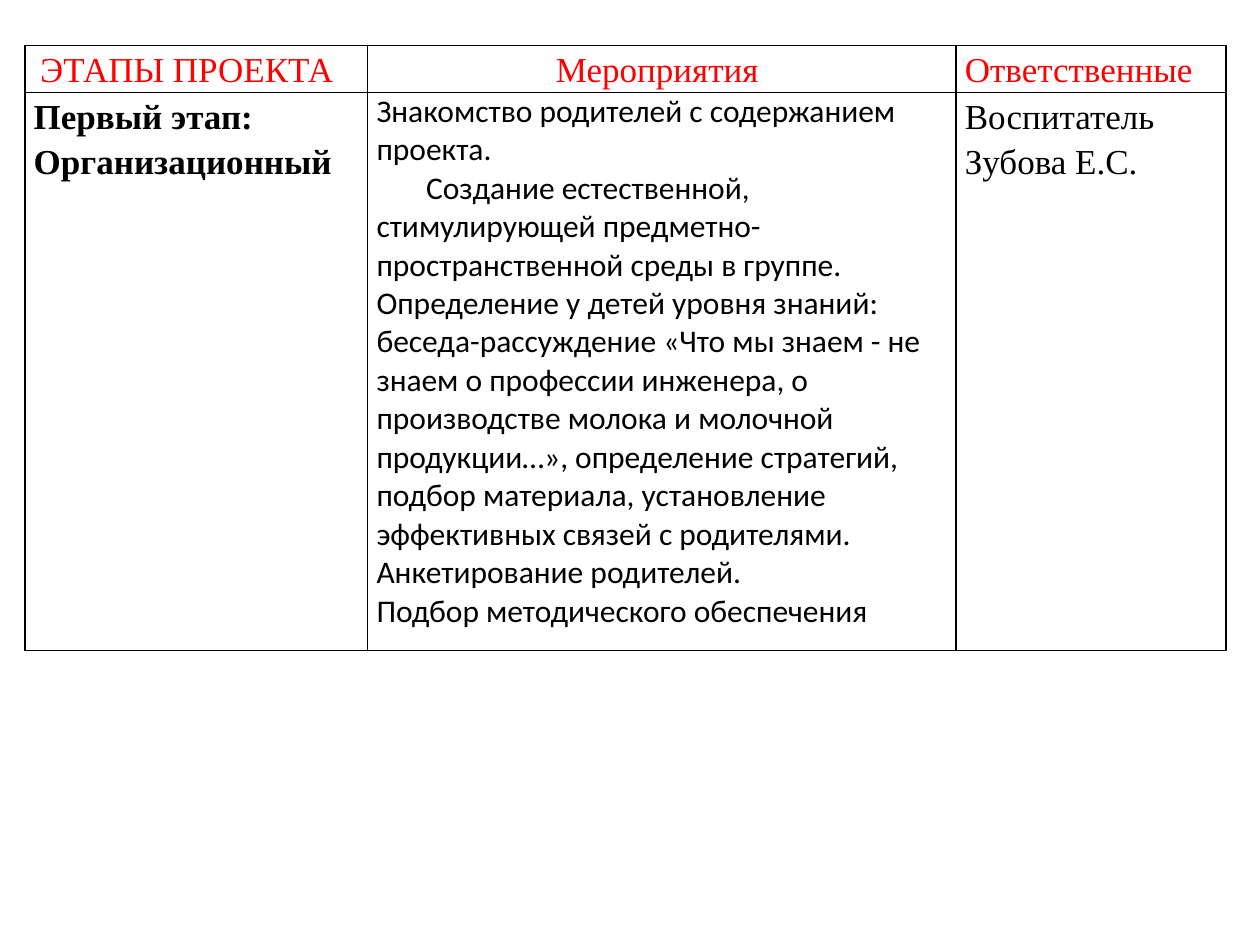
from lxml import etree
from pptx import Presentation
from pptx.dml.color import RGBColor
from pptx.enum.text import MSO_ANCHOR, PP_ALIGN
from pptx.oxml.ns import qn
from pptx.util import Cm, Pt

BLACK = RGBColor(0x00, 0x00, 0x00)
RED = RGBColor(0xFF, 0x00, 0x00)
LEFT, CENTER = PP_ALIGN.LEFT, PP_ALIGN.CENTER
TOP = MSO_ANCHOR.TOP

SERIF, SANS = "Times New Roman", "Calibri"
COLUMN_WIDTHS = (6.91, 11.86, 5.44)
ROW_HEIGHTS = (0.94, 11.25)
SIDE_MARGIN = 0.18

ACTIVITIES = (
    "Знакомство родителей с содержанием проекта.",
    "Создание естественной, стимулирующей предметно-пространственной среды в группе.",
    "Определение у детей уровня знаний: беседа-рассуждение «Что мы знаем - не знаем "
    "о профессии инженера, о производстве молока и молочной продукции…», определение "
    "стратегий, подбор материала, установление эффективных связей с родителями.",
    "Анкетирование родителей.",
    "Подбор методического обеспечения",
)


def set_borders(cell):
    """Draw a thin black line on each side of a cell."""
    properties = cell._tc.get_or_add_tcPr()
    for position, side in enumerate(("a:lnL", "a:lnR", "a:lnT", "a:lnB")):
        line = etree.Element(qn(side), w=str(Pt(1)))
        fill = etree.SubElement(line, qn("a:solidFill"))
        etree.SubElement(fill, qn("a:srgbClr"), val=str(BLACK))
        properties.insert(position, line)


def fill_cell(cell, texts, font=SERIF, size=20, color=BLACK, bold=False,
              alignment=LEFT, spacing=1.15, right_gap=0):
    """Format a cell and write one paragraph for each text."""
    cell.fill.background()
    set_borders(cell)
    cell.vertical_anchor = TOP
    cell.margin_left = Cm(SIDE_MARGIN)
    cell.margin_right = Cm(SIDE_MARGIN + right_gap)
    cell.margin_top = cell.margin_bottom = Cm(0)
    frame = cell.text_frame
    for index, text in enumerate(texts):
        paragraph = frame.add_paragraph() if index else frame.paragraphs[0]
        paragraph.alignment = alignment
        paragraph.line_spacing = spacing
        run = paragraph.add_run()
        run.text = text
        run.font.name = font
        run.font.size = Pt(size)
        run.font.bold = bold
        run.font.color.rgb = color


def add_stage_table(slide, left, top):
    """Place the table of project stages with its top left corner at a point."""
    shape = slide.shapes.add_table(
        len(ROW_HEIGHTS), len(COLUMN_WIDTHS), Cm(left), Cm(top),
        Cm(sum(COLUMN_WIDTHS)), Cm(sum(ROW_HEIGHTS)))
    table = shape.table
    table.first_row = table.horz_banding = False
    for column, width in zip(table.columns, COLUMN_WIDTHS):
        column.width = Cm(width)
    for row, height in zip(table.rows, ROW_HEIGHTS):
        row.height = Cm(height)

    headers = (("ЭТАПЫ ПРОЕКТА", CENTER, 0.38),
               ("Мероприятия", CENTER, 0.18),
               ("Ответственные", LEFT, 0))
    for index, (text, alignment, gap) in enumerate(headers):
        fill_cell(table.cell(0, index), [text], color=RED,
                  alignment=alignment, right_gap=gap)

    fill_cell(table.cell(1, 0), ["Первый этап: Организационный"], bold=True)
    activities = table.cell(1, 1)
    fill_cell(activities, ACTIVITIES, font=SANS, size=18, spacing=1.0)
    indented = activities.text_frame.paragraphs[1]
    indented._p.get_or_add_pPr().set("indent", str(Cm(1)))
    fill_cell(table.cell(1, 2), ["Воспитатель Зубова Е.С."])


def main():
    """Build the slide and save the presentation."""
    presentation = Presentation()
    presentation.slide_width = Cm(25.4)
    presentation.slide_height = Cm(19.05)
    slide = presentation.slides.add_slide(presentation.slide_layouts[6])
    add_stage_table(slide, 0.5, 0.92)
    presentation.save("out.pptx")


if __name__ == "__main__":
    main()
